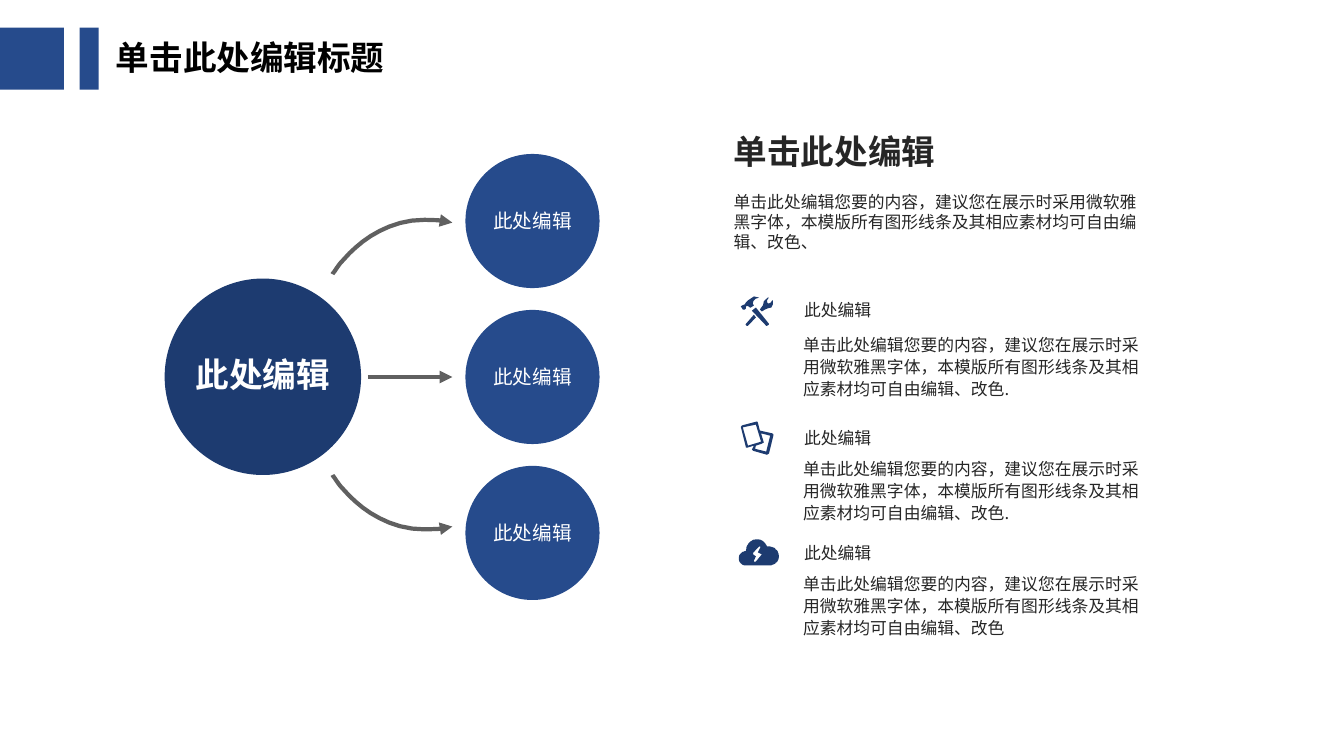
from pptx import Presentation
from pptx import util as u
from pptx.dml.color import RGBColor
from pptx.enum import shapes, text
from pptx.oxml.ns import qn
from lxml import etree

Cm = u.Cm


class Theme:
    navy = RGBColor.from_string("1D3B70")
    blue = RGBColor.from_string("264B8C")
    gray = RGBColor.from_string("606060")
    ink = RGBColor.from_string("262626")
    black = RGBColor.from_string("000000")
    white = RGBColor.from_string("FFFFFF")
    face = "Noto Sans CJK SC"
    head = 24
    node = 14
    body = 12


def bend(a, b, c, d, steps=16):
    points = []
    for i in range(steps + 1):
        t = i / steps
        s = 1 - t
        mix = (s ** 3, 3 * s * s * t, 3 * s * t * t, t ** 3)
        points.append(tuple(sum(m * p[k] for m, p in zip(mix, (a, b, c, d))) for k in (0, 1)))
    return points


def write(frame, words, size, color, bold=False, lead=1.0, align=text.PP_ALIGN.LEFT):
    para = frame.paragraphs[0]
    para.text = words
    para.alignment = align
    para.line_spacing = lead
    font = para.runs[0].font
    font.size = u.Pt(size)
    font.bold = bold
    font.color.rgb = color
    font.name = Theme.face
    etree.SubElement(para.runs[0].font._element, qn("a:ea")).set("typeface", Theme.face)


deck = Presentation()
deck.slide_width, deck.slide_height = Cm(33.87), Cm(19.05)
slide = deck.slides.add_slide(deck.slide_layouts[6])
tree = slide.shapes
mid = 9.5
label = "此处编辑"

nodes = [(4.15, mid - 2.48, 4.95, Theme.navy, Theme.head, True, 0.9)]
for row in (-1, 0, 1):
    nodes.append((11.73, mid - 1.69 + row * 3.93, 3.38, Theme.blue, Theme.node, False, 1.0))
for left, top, size, fill, type_size, bold, lead in nodes:
    disc = tree.add_shape(shapes.MSO_SHAPE.OVAL, Cm(left), Cm(top), Cm(size), Cm(size))
    disc.shadow.inherit = False
    disc.fill.solid()
    disc.fill.fore_color.rgb = fill
    disc.line.fill.background()
    frame = disc.text_frame
    frame.margin_left = frame.margin_right = frame.margin_top = frame.margin_bottom = 0
    frame.vertical_anchor = text.MSO_ANCHOR.MIDDLE
    frame.word_wrap = True
    write(frame, label, type_size, Theme.white, bold, lead, text.PP_ALIGN.CENTER)

axis = 944
arrows = [tree.add_connector(shapes.MSO_CONNECTOR.STRAIGHT, Cm(9.27), Cm(mid), Cm(11.4), Cm(mid))]
etree.SubElement(arrows[0]._element.spPr, qn("a:effectLst"))
for side in (-1, 1):
    foot = (838, axis + side * 253)
    curve = bend(foot, foot, (940, axis + side * 428), (1140, axis + side * 383))
    pen = tree.build_freeform(*curve[0], scale=Cm(0.01))
    pen.add_line_segments(curve[1:], close=False)
    arc = pen.convert_to_shape()
    arc.shadow.inherit = False
    arc.fill.background()
    arrows.append(arc)
for arrow in arrows:
    arrow.line.color.rgb = Theme.gray
    arrow.line.width = u.Pt(3)
    etree.SubElement(arrow.line._get_or_add_ln(), qn("a:tailEnd")).set("type", "triangle")

tools = [
    [(13, 25), (18, 24), (23, 28), (25, 28), (33, 23), (30, 18), (32, 11), (37, 6), (46, 3),
     (33, 0), (18, 10), (13, 15), (10, 20), (3, 23), (0, 25), (5, 33), (10, 33), (13, 30)],
    [(38, 28), (28, 36), (64, 74), (66, 74), (71, 71), (71, 69)],
    [(81, 10), (79, 10), (76, 15), (71, 18), (67, 17), (66, 10), (70, 4), (69, 2),
     (58, 12), (56, 22), (48, 33), (53, 38), (61, 33), (68, 30), (77, 28), (81, 20)],
    [(13, 69), (12, 71), (15, 74), (18, 74), (38, 53), (33, 46)],
]
cards = [
    [(79, 30), (48, 23), (43, 3), (41, 0), (3, 10), (0, 14), (13, 66), (17, 66),
     (33, 61), (28, 71), (31, 74), (66, 84), (71, 81), (82, 36), (82, 32)],
    [(5, 15), (38, 8), (51, 51), (18, 61)],
    [(64, 76), (36, 69), (38, 61), (53, 56), (58, 53), (51, 30), (74, 36)],
]
cloud = [
    bend((71, 18), (66, 8), (58, 0), (46, 0))
    + bend((46, 0), (30, 0), (18, 13), (18, 30))
    + bend((18, 30), (8, 30), (0, 38), (0, 48))
    + bend((0, 48), (0, 58), (8, 66), (18, 66))
    + bend((76, 66), (89, 66), (101, 56), (101, 43))
    + bend((101, 43), (101, 30), (89, 18), (76, 18)),
    [(58, 38), (43, 56), (39, 57), (38, 54), (43, 43), (36, 38),
     (36, 34), (51, 18), (55, 19), (48, 33)],
]
for left, top, icon in ((18.8, 7.5, tools), (18.67, 10.62, cards), (18.62, 13.59, cloud)):
    if icon is tools:
        left, top = 18.67, 7.47
    pen = tree.build_freeform(*icon[0][0], scale=Cm(0.01))
    pen.add_line_segments(icon[0][1:])
    for part in icon[1:]:
        pen.move_to(*part[0])
        pen.add_line_segments(part[1:])
    sign = pen.convert_to_shape(Cm(left), Cm(top))
    sign.shadow.inherit = False
    sign.fill.solid()
    sign.fill.fore_color.rgb = Theme.navy
    sign.line.fill.background()

for left, width in ((0, 1.61), (2.01, 0.48)):
    bar = tree.add_shape(shapes.MSO_SHAPE.RECTANGLE, Cm(left), Cm(0.7), Cm(width), Cm(1.56))
    bar.shadow.inherit = False
    bar.fill.solid()
    bar.fill.fore_color.rgb = Theme.blue
    bar.line.fill.background()

core = "单击此处编辑您要的内容，建议您在展示时采用微软雅黑字体，本模版所有图形线条及其相应素材均可自由编辑、改色"
slim, wide = (0.25, 0.13), (0.33, 0.18)
boxes = [
    (2.67, 0.91, 7.54, 1.09, slim, True, "单击此处编辑标题", Theme.head, Theme.black, True, 0.9),
    (18.16, 3.12, 5.82, 1.37, wide, False, "单击此处编辑", Theme.head, Theme.ink, True, 1.0),
    (18.16, 4.65, 10.85, 1.88, wide, True, core + "、", Theme.body, Theme.ink, False, 1.0),
]
for top, low, end in ((7.42, 8.26, "."), (10.64, 11.38, "."), (13.54, 14.27, "")):
    boxes.append((19.99, top, 2.24, 0.76, slim, False, label, Theme.body, Theme.ink, False, 1.0))
    boxes.append((19.99, low, 9.02, 1.96, slim, True, core + end, Theme.body, Theme.ink, False, 1.1))
for left, top, width, height, pad, wrap, words, size, color, bold, lead in boxes:
    box = tree.add_textbox(Cm(left), Cm(top), Cm(width), Cm(height))
    frame = box.text_frame
    frame.margin_left = frame.margin_right = Cm(pad[0])
    frame.margin_top = frame.margin_bottom = Cm(pad[1])
    frame.word_wrap = wrap
    align = text.PP_ALIGN.CENTER if words == label else text.PP_ALIGN.LEFT
    write(frame, words, size, color, bold, lead, align)

deck.save("out.pptx")
